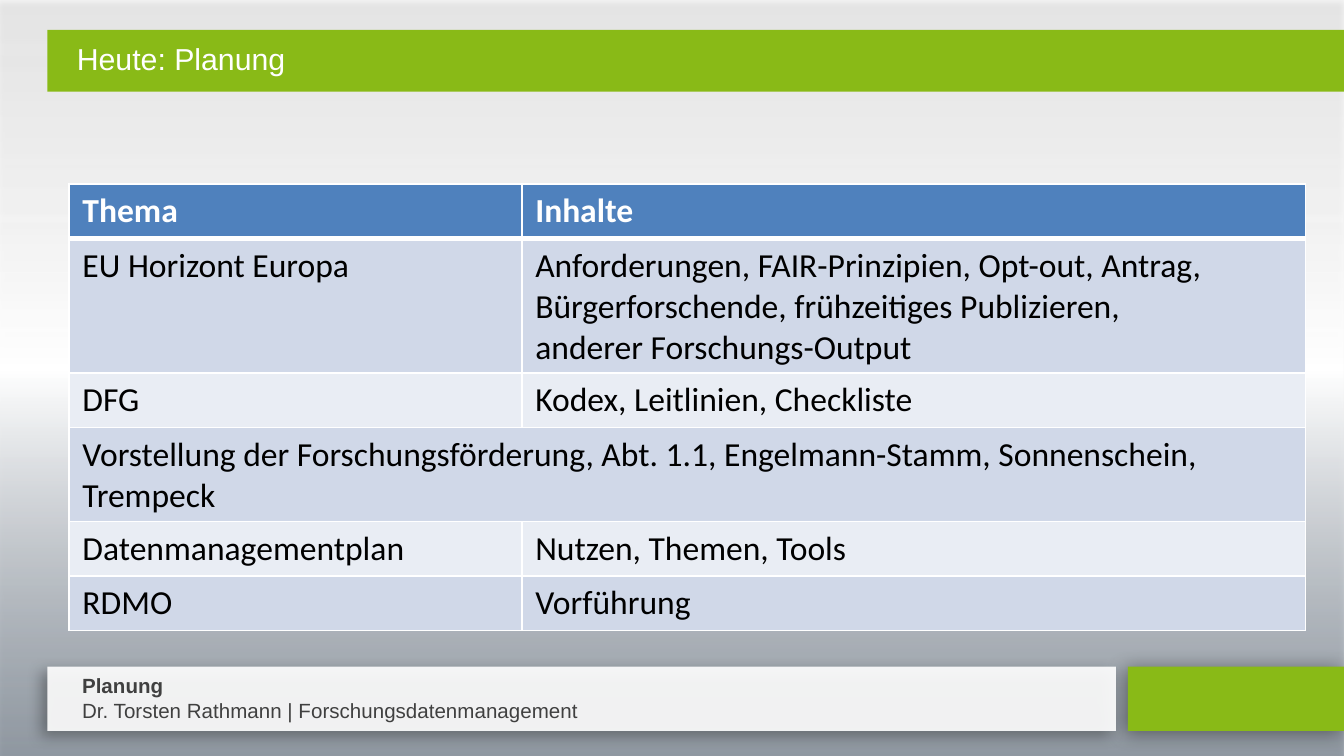
from lxml import etree
from pptx import Presentation
from pptx import util as u
from pptx.dml.color import RGBColor
from pptx.enum import shapes, text
from pptx.oxml import parse_xml
from pptx.oxml.ns import nsdecls, qn

Pt = u.Pt
GREEN = RGBColor(0x89, 0xBA, 0x17)
WHITE = RGBColor(0xFF, 0xFF, 0xFF)
BLACK = RGBColor(0x00, 0x00, 0x00)
DARK = RGBColor(0x40, 0x40, 0x40)
SLATE = RGBColor(0x81, 0x8C, 0x98)
PALE = RGBColor(0xF2, 0xF2, 0xF2)
HEADER = RGBColor(0x4F, 0x81, 0xBD)
BAND_DARK = RGBColor(0xD0, 0xD8, 0xE8)
BAND_LIGHT = RGBColor(0xE9, 0xED, 0xF4)

ROWS = [
    ("Thema", "Inhalte"),
    ("EU Horizont Europa",
     "Anforderungen, FAIR-Prinzipien, Opt-out, Antrag, Bürgerforschende, "
     "frühzeitiges Publizieren, \nanderer Forschungs-Output"),
    ("DFG", "Kodex, Leitlinien, Checkliste"),
    ("Vorstellung der Forschungsförderung, Abt. 1.1, Engelmann-Stamm, "
     "Sonnenschein, Trempeck",),
    ("Datenmanagementplan", "Nutzen, Themen, Tools"),
    ("RDMO", "Vorführung"),
]


def color_xml(color, alpha=100):
    return f'<a:srgbClr val="{color}"><a:alpha val="{alpha * 1000}"/></a:srgbClr>'


def add_rect(s, box, color, alpha=100):
    sp = s.shapes.add_shape(shapes.MSO_SHAPE.RECTANGLE, *map(Pt, box))
    sp.shadow.inherit = False
    sp.line.fill.background()
    sp.fill.solid()
    sp.fill.fore_color.rgb = color
    if alpha < 100:
        solid = sp._element.spPr.find(qn("a:solidFill"))
        solid.replace(solid[0], parse_xml(
            color_xml(color, alpha).replace("<a:srgbClr", f"<a:srgbClr {nsdecls('a')}", 1)))
    return sp


def add_shadow(sp, alpha, blur, dist, angle):
    effects = sp._element.spPr.find(qn("a:effectLst"))
    effects.append(parse_xml(
        f'<a:outerShdw {nsdecls("a")} blurRad="{Pt(blur)}" dist="{Pt(dist)}" '
        f'dir="{angle * 60000}" algn="ctr" rotWithShape="0">'
        f'{color_xml(BLACK, alpha)}</a:outerShdw>'))


def add_run(p, content, font, size, color, bold=False):
    r = p.add_run()
    r.text = content
    r.font.name, r.font.size, r.font.bold = font, Pt(size), bold
    r.font.color.rgb = color


def add_text_box(s, box):
    tf = s.shapes.add_textbox(*map(Pt, box)).text_frame
    tf.word_wrap = True
    tf.vertical_anchor = text.MSO_ANCHOR.TOP
    return tf


def add_background(s, box):
    sp = add_rect(s, box, WHITE)
    stops = "".join(f'<a:gs pos="{pos * 1000}">{color_xml(color, alpha)}</a:gs>'
                    for pos, color, alpha in ((0, SLATE, 75), (51, WHITE, 100), (100, PALE, 73)))
    spPr = sp._element.spPr
    spPr.replace(spPr.find(qn("a:solidFill")), parse_xml(
        f'<a:gradFill {nsdecls("a")} rotWithShape="1"><a:gsLst>{stops}</a:gsLst>'
        f'<a:lin ang="{270 * 60000}" scaled="0"/></a:gradFill>'))
    add_shadow(sp, 35, 3.1, 1.8, 90)


def add_footer(s, box):
    x, y, w, h = box
    panel_w, gap = 572.4, 6.4
    # Green block on the right, light panel on the left
    block_x = x + panel_w + gap
    block = add_rect(s, (block_x, y, x + w - block_x, h), GREEN)
    add_shadow(block, 42, 10.8, 2, 142)
    panel = add_rect(s, (x, y, panel_w, h), WHITE, 91)
    add_shadow(panel, 34, 7.5, 4, 145)
    # Topic and speaker
    tf = add_text_box(s, (x + 11.5, y, 430.5, h))
    add_run(tf.paragraphs[0], "Planung", "Arial", 11, DARK, True)
    add_run(tf.add_paragraph(), "Dr. Torsten Rathmann | Forschungsdatenmanagement",
            "Arial", 11, DARK)


def add_title(s, box):
    x, y, w, h = box
    add_rect(s, box, GREEN)
    tf = add_text_box(s, (x, y, w - 11.5, h - 8))
    tf.margin_left, tf.margin_top = Pt(15.8), Pt(5.8)
    add_run(tf.paragraphs[0], "Heute: Planung", "Arial", 16.2, WHITE)


def set_borders(cell, bottom):
    tcPr = cell._tc.get_or_add_tcPr()
    widths = {"lnL": 1, "lnR": 1, "lnT": 1, "lnB": bottom}
    for i, (tag, width) in enumerate(widths.items()):
        ln = etree.Element(qn(f"a:{tag}"), w=str(Pt(width)))
        fill = etree.SubElement(ln, qn("a:solidFill"))
        etree.SubElement(fill, qn("a:srgbClr"), val=str(WHITE))
        tcPr.insert(i, ln)


def add_topics(s, box):
    frame = s.shapes.add_table(len(ROWS), 2, *map(Pt, box))
    table = frame.table
    for column, width in zip(table.columns, (242.6, box[2] - 242.6)):
        column.width = Pt(width)
    for i, row in enumerate(ROWS):
        table.rows[i].height = Pt(29.2)
        if len(row) == 1:
            table.cell(i, 0).merge(table.cell(i, 1))
        head = i == 0
        band = HEADER if head else BAND_DARK if i % 2 else BAND_LIGHT
        for j in range(2):
            cell = table.cell(i, j)
            cell.fill.solid()
            cell.fill.fore_color.rgb = band
            set_borders(cell, 3 if head else 1)
        for j, content in enumerate(row):
            p = table.cell(i, j).text_frame.paragraphs[0]
            for k, line in enumerate(content.split("\n")):
                if k:
                    p.add_line_break()
                add_run(p, line, "Calibri", 18, WHITE if head else BLACK, head)


def main():
    prs = Presentation()
    prs.slide_width, prs.slide_height = Pt(720), Pt(405)
    s = prs.slides.add_slide(prs.slide_layouts[6])
    add_background(s, (-0.5, 0, 720.5, 405))
    add_footer(s, (25.4, 357.1, 694.6, 34.5))
    add_title(s, (25.4, 16, 697.7, 33.2))
    add_topics(s, (37, 98.6, 662.4, 239))
    prs.save("out.pptx")


if __name__ == "__main__":
    main()
